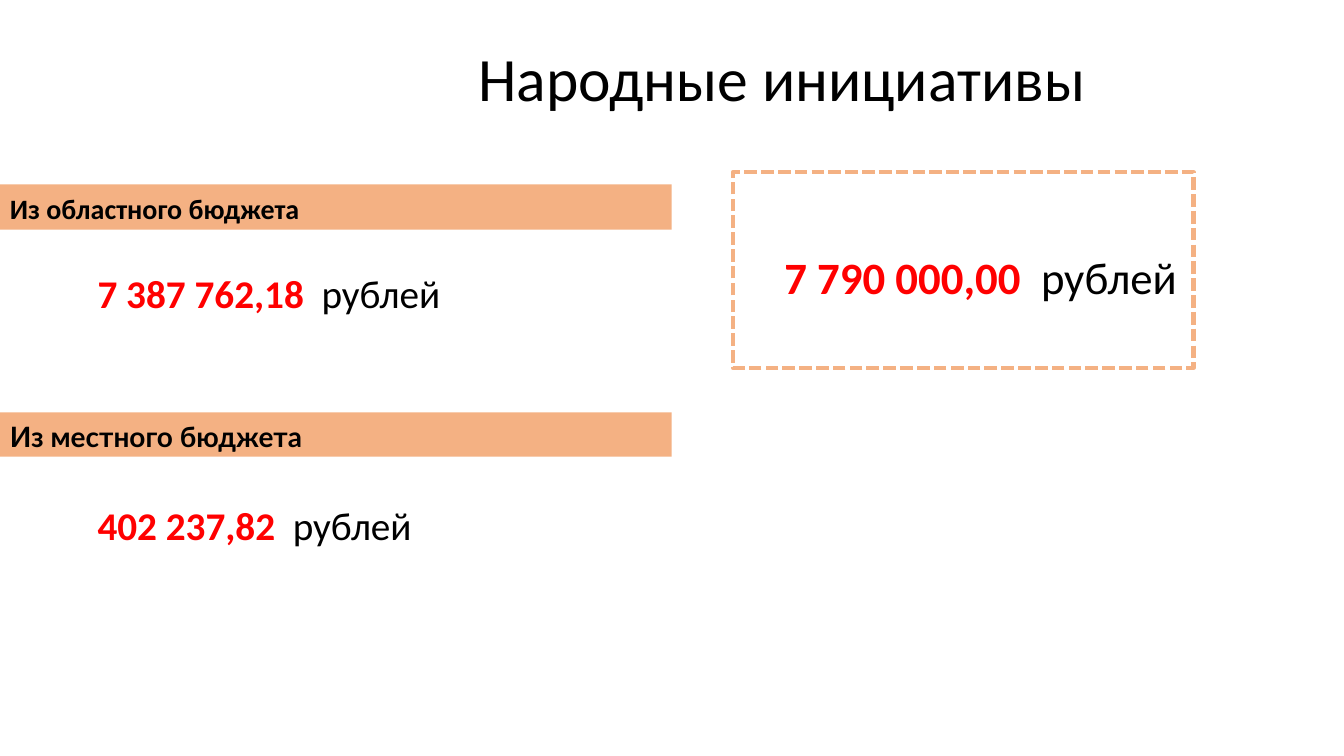
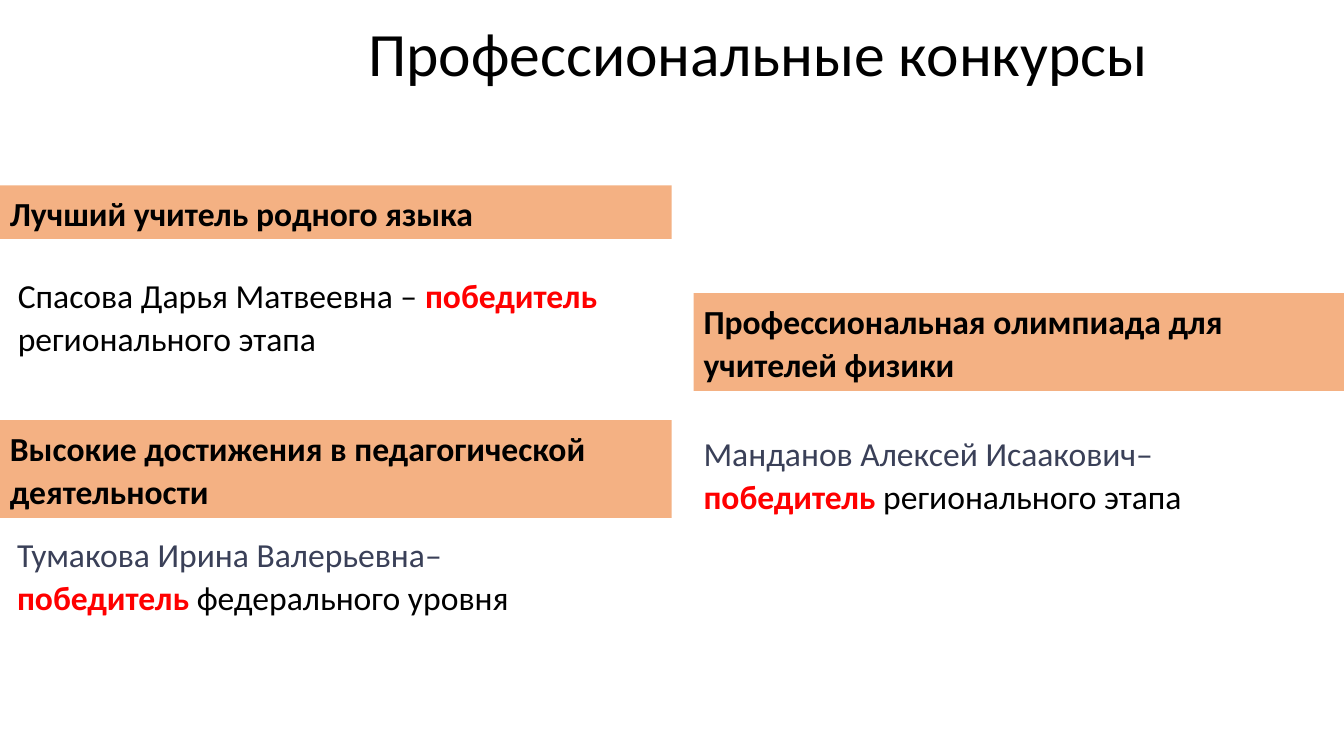
from pptx import Presentation
from pptx import util as u
from pptx.dml.color import RGBColor
from pptx.enum import dml, shapes, text

# Shared look
FONT = "Calibri"
BLACK, RED, SLATE, PEACH = "000000", "FF0000", "3A4058", "F4B183"
SLIDE_WIDTH = 33.87
LEFT_BAND = (0, 16.93)
RIGHT_BAND = (17.48, SLIDE_WIDTH - 17.48)
LINE_SPACING = 1.07
SPACE_WIDTH = 0.226  # width of a space, in parts of the text size
WINNER = "победитель"


def rgb(code):
    return RGBColor.from_string(code)


def cm(*lengths):
    return [u.Cm(length) for length in lengths]


def add_run(paragraph, words, size, color=BLACK, bold=False, font=FONT):
    run = paragraph.add_run()
    run.text = words
    run.font.name = font
    run.font.size = u.Pt(size)
    run.font.bold = bold
    run.font.color.rgb = rgb(color)
    return run


def first_paragraph(holder, align=text.PP_ALIGN.LEFT, spacing=LINE_SPACING):
    frame = holder.text_frame
    frame.word_wrap = True
    frame.vertical_anchor = text.MSO_ANCHOR.TOP
    paragraph = frame.paragraphs[0]
    paragraph.alignment = align
    paragraph.line_spacing = spacing
    return paragraph


def add_rectangle(slide, box):
    rectangle = slide.shapes.add_shape(shapes.MSO_SHAPE.RECTANGLE, *cm(*box))
    rectangle.shadow.inherit = False
    return rectangle


def add_title(slide, words, left, top):
    title = slide.shapes.add_textbox(*cm(left, top, 25.7, 2.39))
    add_run(first_paragraph(title, text.PP_ALIGN.CENTER), words, 44)


def add_band(slide, words, column, top, height, size=24, font=FONT):
    left, width = column
    band = add_rectangle(slide, (left, top, width, height))
    band.fill.solid()
    band.fill.fore_color.rgb = rgb(PEACH)
    band.line.fill.background()
    add_run(first_paragraph(band), words, size, bold=True, font=font)


def add_amount(slide, amount, box, size=28, align=text.PP_ALIGN.LEFT):
    sum_box = slide.shapes.add_textbox(*cm(*box))
    paragraph = first_paragraph(sum_box, align, spacing=1.0)
    add_run(paragraph, amount, size, RED, bold=True)
    # One space, tracked out to double width
    gap = add_run(paragraph, " ", size)
    gap.font._element.set("spc", str(round(size * SPACE_WIDTH * 100)))
    add_run(paragraph, "рублей", size)


def add_dashed_frame(slide, box):
    frame = add_rectangle(slide, box)
    frame.fill.background()
    frame.line.color.rgb = rgb(PEACH)
    frame.line.width = u.Pt(3)
    frame.line.dash_style = dml.MSO_LINE.SQUARE_DOT


def add_winner(slide, person, level, box, color=SLATE):
    paragraph = first_paragraph(slide.shapes.add_textbox(*cm(*box)))
    add_run(paragraph, person + "– ", 24, color)
    add_run(paragraph, WINNER, 24, RED, bold=True)
    add_run(paragraph, " " + level, 24)


def build_initiatives(slide):
    add_title(slide, "Народные инициативы", 6.86, 0.76)

    # Budget sources
    add_band(slide, "Из областного бюджета", LEFT_BAND, 4.65, 1.14, 20)
    add_amount(slide, "7 387 762,18", (2.21, 6.65, 10, 1.45))
    add_band(slide, "Из местного бюджета", LEFT_BAND, 10.39, 1.12, 20, "Lato")
    add_amount(slide, "402 237,82", (2.21, 12.52, 10, 2.11))

    # Total
    add_amount(slide, "7 790 000,00", (18.01, 6.17, 13.41, 2.39), 32,
               text.PP_ALIGN.CENTER)
    add_dashed_frame(slide, (18.47, 4.34, 11.61, 4.93))


def build_contests(slide):
    add_title(slide, "Профессиональные конкурсы", 6.27, 0.13)

    # Left column
    add_band(slide, "Лучший учитель родного языка", LEFT_BAND, 4.67, 1.35)
    add_winner(slide, "Спасова Дарья Матвеевна ", "регионального этапа",
               (0.2, 6.73, 15.37, 3.73), BLACK)
    add_band(slide, "Высокие достижения в педагогической деятельности",
             LEFT_BAND, 10.59, 2.46)
    add_winner(slide, "Тумакова Ирина Валерьевна", "федерального уровня",
               (0.18, 13.26, 15.42, 2.49))

    # Right column
    add_band(slide, "Профессиональная олимпиада для учителей физики",
             RIGHT_BAND, 7.39, 2.46)
    add_winner(slide, "Манданов Алексей Исаакович", "регионального этапа",
               (RIGHT_BAND[0], 10.72, 14.3, 3.56))


def main():
    deck = Presentation()
    deck.slide_width, deck.slide_height = cm(SLIDE_WIDTH, 19.05)
    for build in (build_initiatives, build_contests):
        build(deck.slides.add_slide(deck.slide_layouts[6]))
    deck.save("out.pptx")


if __name__ == "__main__":
    main()
